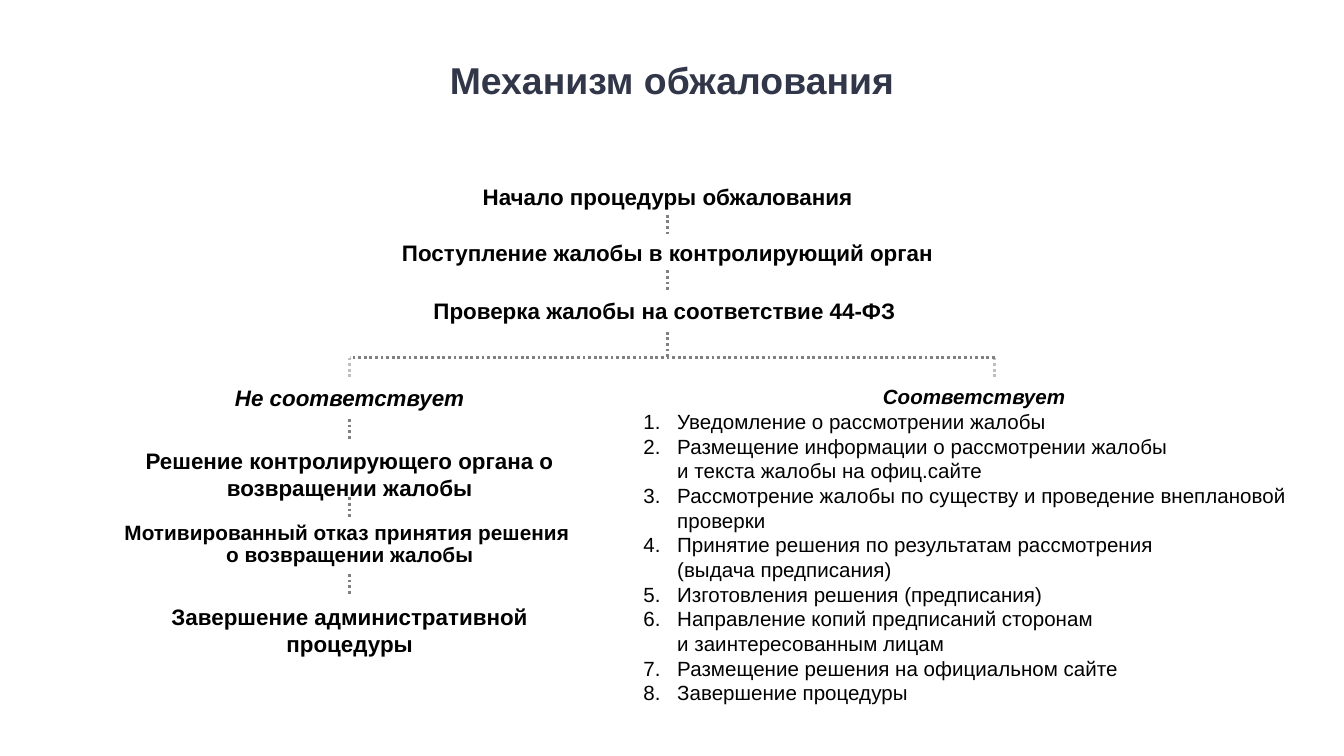
from dataclasses import dataclass

from lxml.etree import SubElement
from pptx import Presentation
from pptx.dml.color import RGBColor as Rgb
from pptx.enum.dml import MSO_LINE_DASH_STYLE as Dash
from pptx.enum.shapes import MSO_CONNECTOR as Connector
from pptx.enum.text import MSO_ANCHOR as Anchor, PP_ALIGN as Align
from pptx.oxml.ns import qn
from pptx.util import Cm, Pt


@dataclass(frozen=True)
class Theme:
    font: str = "Arial"
    title: Rgb = Rgb(0x32, 0x36, 0x49)
    text: Rgb = Rgb(0, 0, 0)
    link: Rgb = Rgb(0x80, 0x80, 0x80)
    branch_link: Rgb = Rgb(0xBF, 0xBF, 0xBF)
    title_size: float = 20
    step_size: float = 12
    refusal_size: float = 11.1
    list_size: float = 11
    link_width: float = 1.5


@dataclass(frozen=True)
class Step:
    """A box of the flow, centred on an axis; lengths in centimetres."""
    text: str
    axis: float
    top: float
    width: float
    height: float
    size: float
    italic: bool = False
    line_spacing: float = 1.0


@dataclass(frozen=True)
class Link:
    x1: float
    y1: float
    x2: float
    y2: float
    color: Rgb


THEME = Theme()
MAIN, REJECTED, ACCEPTED = 12.62, 6.61, 18.8
FORK, BRANCH_TOP = 6.76, 7.14

STEPS = [
    Step("Начало процедуры обжалования", MAIN, 3.33, 9.42, 0.86, THEME.step_size),
    Step("Поступление жалобы в контролирующий орган", MAIN, 4.39, 11.81, 0.86, THEME.step_size),
    Step("Проверка жалобы на соответствие 44-ФЗ ", MAIN, 5.49, 10.62, 0.86, THEME.step_size),
    Step("Не соответствует", REJECTED, BRANCH_TOP, 11, 0.79, THEME.step_size, italic=True),
    Step("Решение контролирующего органа о возвращении жалобы",
         REJECTED, 8.33, 10.06, 1.5, THEME.step_size),
    Step("Мотивированный отказ принятия решения \nо возвращении жалобы",
         REJECTED, 9.75, 10.62, 1.12, THEME.refusal_size, line_spacing=0.9),
    Step("Завершение административной процедуры",
         REJECTED, 11.28, 9.55, 0.81, THEME.step_size),
]

VERTICAL_LINKS = [
    (MAIN, 4.06, 4.47, THEME.link),
    (MAIN, 5.11, 5.51, THEME.link),
    (MAIN, 6.27, FORK, THEME.link),
    (REJECTED, 7.92, 8.33, THEME.link),
    (REJECTED, 9.4, 9.78, THEME.link),
    (REJECTED, 10.85, 11.25, THEME.link),
    (REJECTED, FORK, BRANCH_TOP, THEME.branch_link),
    (ACCEPTED, FORK, BRANCH_TOP, THEME.branch_link),
]
LINKS = [Link(x, top, x, bottom, color) for x, top, bottom, color in VERTICAL_LINKS]
LINKS.append(Link(ACCEPTED, FORK, REJECTED, FORK, THEME.link))

REVIEW_STAGES = [
    "Уведомление о рассмотрении жалобы",
    "Размещение информации о рассмотрении жалобы \nи текста жалобы на офиц.сайте",
    "Рассмотрение жалобы по существу и проведение внеплановой проверки",
    "Принятие решения по результатам рассмотрения \n(выдача предписания)",
    "Изготовления решения (предписания)",
    "Направление копий предписаний сторонам \nи заинтересованным лицам",
    "Размещение решения на официальном сайте",
    "Завершение процедуры",
]


def write(paragraph, text: str, size: float, color: Rgb = THEME.text,
          bold: bool = False, italic: bool = False) -> None:
    paragraph.text = text
    for run in paragraph.runs:
        font = run.font
        font.name, font.size = THEME.font, Pt(size)
        font.bold, font.italic = bold, italic
        font.color.rgb = color


def number(paragraph) -> None:
    """Give the paragraph an automatic number and a hanging indent."""
    properties = paragraph._p.get_or_add_pPr()
    properties.set("marL", str(Cm(0.64)))
    properties.set("indent", str(-Cm(0.64)))
    SubElement(properties, qn("a:buFont"), typeface=THEME.font)
    SubElement(properties, qn("a:buAutoNum"), type="arabicPeriod")


def add_text_frame(slide, left: float, top: float, width: float, height: float):
    frame = slide.shapes.add_textbox(Cm(left), Cm(top), Cm(width), Cm(height)).text_frame
    frame.word_wrap = True
    return frame


def add_title(slide, text: str) -> None:
    title = slide.shapes.title
    title.left, title.top, title.width, title.height = Cm(1.27), Cm(0.58), Cm(22.86), Cm(1.85)
    title.text_frame.vertical_anchor = Anchor.MIDDLE
    heading = title.text_frame.paragraphs[0]
    write(heading, text, THEME.title_size, THEME.title, bold=True)
    heading.alignment = Align.CENTER


def add_step(slide, step: Step) -> None:
    frame = add_text_frame(slide, step.axis - step.width / 2, step.top, step.width, step.height)
    label = frame.paragraphs[0]
    write(label, step.text, step.size, bold=True, italic=step.italic)
    label.alignment = Align.CENTER
    label.line_spacing = step.line_spacing


def add_review(slide, heading_text: str, stages: list[str]) -> None:
    frame = add_text_frame(slide, 11.91, BRANCH_TOP, 13, 6.32)
    heading = frame.paragraphs[0]
    write(heading, heading_text, THEME.list_size, bold=True, italic=True)
    heading.alignment = Align.CENTER
    for stage in stages:
        item = frame.add_paragraph()
        number(item)
        write(item, stage, THEME.list_size)


def add_link(slide, link: Link) -> None:
    connector = slide.shapes.add_connector(
        Connector.STRAIGHT, Cm(link.x1), Cm(link.y1), Cm(link.x2), Cm(link.y2))
    connector.line.color.rgb = link.color
    connector.line.width = Pt(THEME.link_width)
    connector.line.dash_style = Dash.ROUND_DOT
    SubElement(connector._element.spPr, qn("a:effectLst"))


def main() -> None:
    deck = Presentation()
    deck.slide_width, deck.slide_height = Cm(25.4), Cm(14.29)
    slide = deck.slides.add_slide(deck.slide_layouts.get_by_name("Title Only"))
    add_title(slide, "Механизм обжалования")
    add_review(slide, "Соответствует", REVIEW_STAGES)
    for step in STEPS:
        add_step(slide, step)
    for link in LINKS:
        add_link(slide, link)
    deck.save("out.pptx")


if __name__ == "__main__":
    main()
